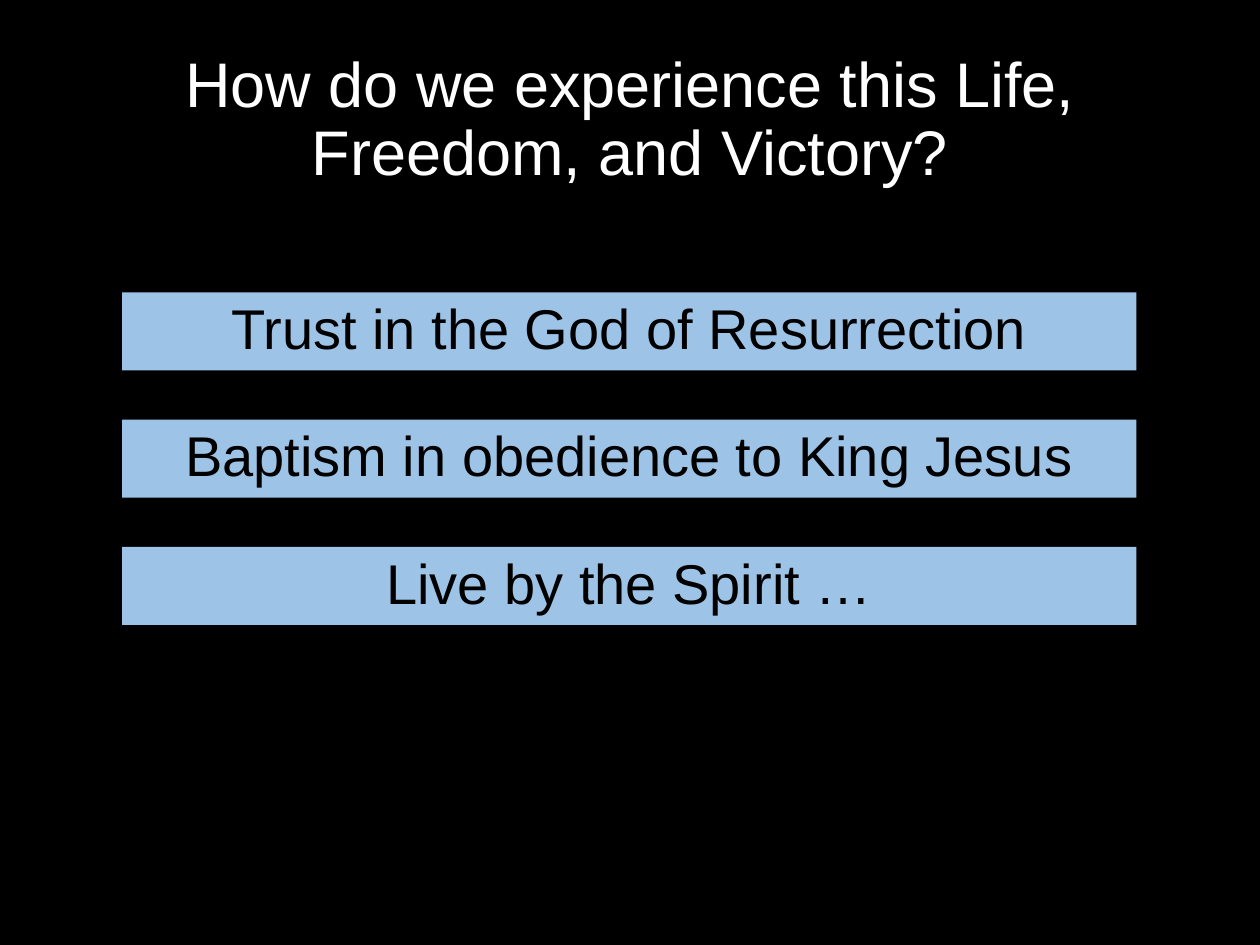
"""Build a slide with a question as title and three answers in blue bars."""
from dataclasses import dataclass

from pptx import Presentation
from pptx.dml.color import RGBColor
from pptx.enum.text import MSO_ANCHOR, MSO_AUTO_SIZE, PP_ALIGN
from pptx.oxml.ns import qn
from pptx.util import Inches, Pt

CENTER = PP_ALIGN.CENTER
MIDDLE = MSO_ANCHOR.MIDDLE
NO_AUTOFIT = MSO_AUTO_SIZE.NONE
COMPARISON_LAYOUT = 4


@dataclass(frozen=True)
class Theme:
    font: str = "Arial"
    background: RGBColor = RGBColor(0x00, 0x00, 0x00)
    question: RGBColor = RGBColor(0xFF, 0xFF, 0xFF)
    bar: RGBColor = RGBColor(0x9D, 0xC3, 0xE6)
    answer: RGBColor = RGBColor(0x00, 0x00, 0x00)
    question_size: Pt = Pt(36)
    answer_size: Pt = Pt(32)
    answer_space: Pt = Pt(10)


def write_centered(holder, wording, size, color):
    frame = holder.text_frame
    frame.text = wording
    frame.word_wrap = True
    frame.auto_size = NO_AUTOFIT
    frame.vertical_anchor = MIDDLE
    paragraph = frame.paragraphs[0]
    paragraph.alignment = CENTER
    paragraph.line_spacing = 0.9
    font = paragraph.runs[0].font
    font.name = theme.font
    font.size = size
    font.bold = False
    font.color.rgb = color
    return paragraph


def place(holder, left, top, width, height):
    holder.left, holder.top = Inches(left), Inches(top)
    holder.width, holder.height = Inches(width), Inches(height)


theme = Theme()
answers = [
    "Trust in the God of Resurrection",
    "Baptism in obedience to King Jesus",
    "Live by the Spirit …",
]
first_top, pitch = 2.32, 1.01

deck = Presentation()
deck.slide_width, deck.slide_height = Inches(10), Inches(7.5)
slide = deck.slides.add_slide(deck.slide_layouts[COMPARISON_LAYOUT])
slide.background.fill.solid()
slide.background.fill.fore_color.rgb = theme.background

question = slide.shapes.title
place(question, 0.69, 0.27, 8.62, 1.38)
write_centered(
    question,
    "How do we experience this Life, Freedom, and Victory?",
    theme.question_size,
    theme.question,
)

bars = list(slide.placeholders)[1:]
for row, (bar, answer) in enumerate(zip(bars, answers)):
    place(bar, 0.97, first_top + row * pitch, 8.05, 0.62)
    bar.fill.solid()
    bar.fill.fore_color.rgb = theme.bar
    paragraph = write_centered(bar, answer, theme.answer_size, theme.answer)
    paragraph.space_before = theme.answer_space
    properties = paragraph._p.get_or_add_pPr()
    properties.set("marL", "0")
    properties.set("indent", "0")
    properties.append(properties.makeelement(qn("a:buNone"), {}))

for unused in bars[len(answers):]:
    unused.element.getparent().remove(unused.element)

deck.save("out.pptx")
